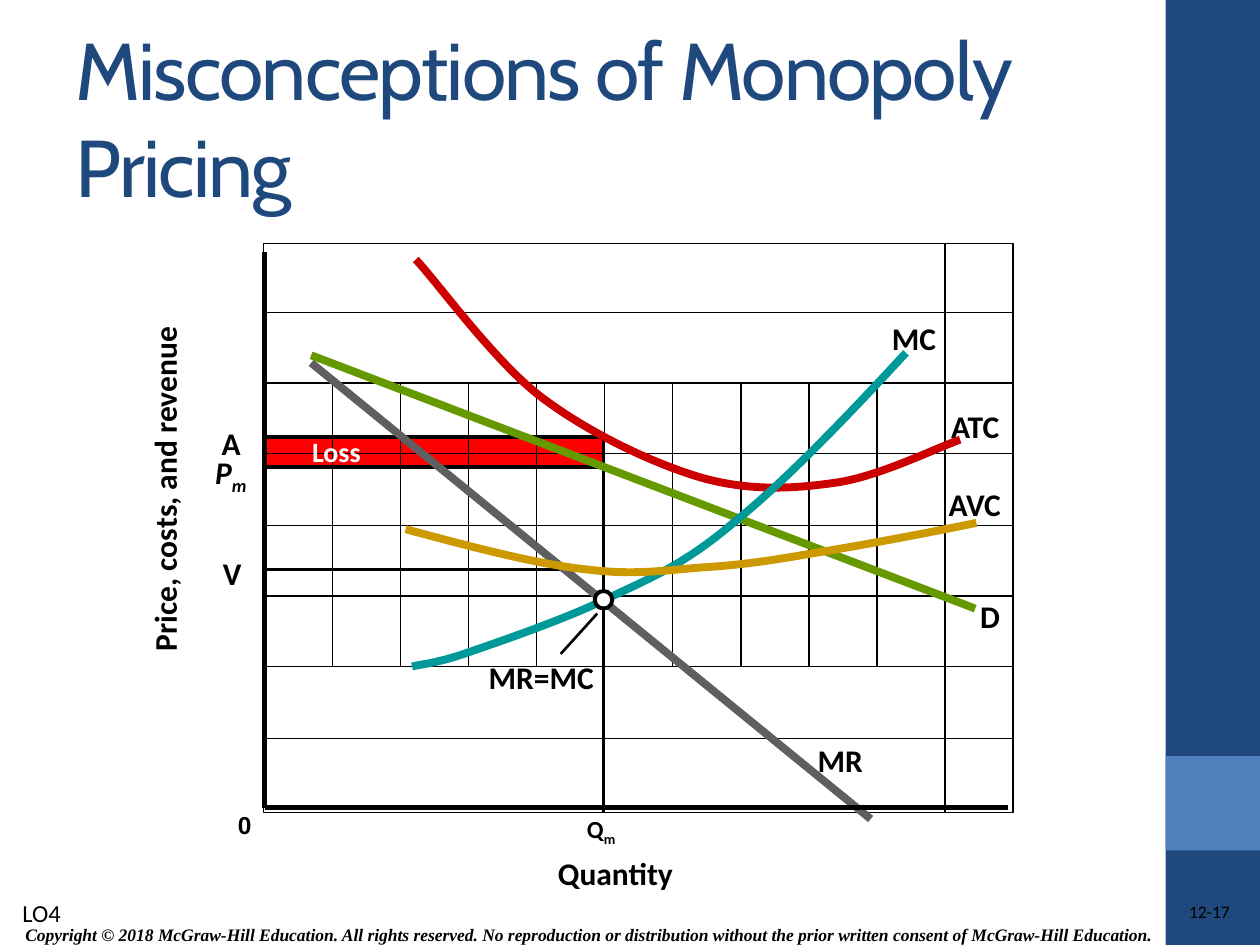
from lxml.etree import SubElement
from pptx import Presentation
from pptx.dml.color import RGBColor
from pptx.enum.shapes import MSO_CONNECTOR as Connector, MSO_SHAPE as Shape
from pptx.enum.text import MSO_ANCHOR as Anchor, MSO_AUTO_SIZE as AutoSize, PP_ALIGN as Align
from pptx.oxml.ns import qn
from pptx.util import Inches, Pt

COLORS = {
    "navy": "1F497D", "blue": "4F81BD", "black": "000000", "white": "FFFFFF",
    "loss": "FF0000", "ATC": "CC0000", "MR": "5F5F5F", "D": "669900",
    "MC": "009999", "AVC": "CC9900",
}
TITLE = "Misconceptions of Monopoly Pricing"
COPYRIGHT = ("Copyright © 2018 McGraw-Hill Education. All rights reserved. No reproduction "
             "or distribution without the prior written consent of McGraw-Hill Education.")

# Chart frame and grid, in inches
LEFT, TOP, WIDTH, HEIGHT = 2.09, 1.93, 5.95, 4.52
RIGHT, BOTTOM = LEFT + WIDTH, TOP + HEIGHT
COLUMN_XS = [2.64 + 0.54 * i for i in range(9)]
ROW_YS = [2.48 + 0.5625 * i for i in range(7)]
LAST_COLUMN_X = 7.5

# Levels read off the axes
AXIS_X, AXIS_Y = 2.1, 6.41
QUANTITY_X = 4.79
COST_Y, PRICE_Y, VARIABLE_COST_Y = 3.47, 3.71, 4.52

# Each curve: a start point, then three Bezier points per segment
CURVES = {
    "ATC": [(3.3, 2.06), (3.47, 2.24), (3.91, 2.85), (4.28, 3.14), (4.66, 3.43),
            (5.16, 3.67), (5.56, 3.79), (5.95, 3.9), (6.3, 3.88), (6.64, 3.83),
            (6.98, 3.78), (7.42, 3.56), (7.62, 3.49)],
    "MC": [(3.27, 5.29), (3.34, 5.27), (3.45, 5.27), (3.71, 5.18), (3.97, 5.09),
           (4.47, 4.92), (4.82, 4.75), (5.18, 4.58), (5.43, 4.48), (5.82, 4.15),
           (6.22, 3.83), (6.71, 3.32), (7.19, 2.8)],
    "AVC": [(3.22, 4.2), (3.74, 4.34), (4.27, 4.48), (4.66, 4.52), (5.06, 4.57),
            (5.31, 4.52), (5.62, 4.5), (5.93, 4.48), (6.17, 4.44), (6.52, 4.38),
            (6.88, 4.32), (7.31, 4.24), (7.75, 4.15)],
}
STRAIGHT_CURVES = {"MR": (2.47, 2.88, 6.91, 6.5), "D": (2.47, 2.82, 7.74, 4.83)}

# text, box, format
LABELS = [
    ("0", (1.79, 6.38, 0.31, 0.33), {"size": 14, "font_name": "Arial"}),
    ("Price, costs, and revenue", (-0.09, 3.67, 2.79, 0.4), {"rotation": 270}),
    ("Quantity", (4.33, 6.73, 1.12, 0.4), {}),
    ("D", (7.68, 4.69, 0.36, 0.4), {}),
    ("MR", (6.39, 5.83, 0.56, 0.4), {}),
    ("ATC", (7.45, 3.18, 0.59, 0.4), {}),
    ("MC", (6.98, 2.48, 0.56, 0.4), {}),
    ("MR=MC", (3.78, 5.17, 1.04, 0.4), {}),
    ("AVC", (7.43, 3.8, 0.62, 0.4), {}),
    ("P", (1.61, 3.55, 0.47, 0.4), {"italic": True, "subscript": "m"}),
    ("Q", (4.56, 6.41, 0.44, 0.34), {"size": 14, "subscript": "m"}),
    ("V", (1.67, 4.35, 0.35, 0.4), {}),
    ("A", (1.66, 3.32, 0.35, 0.4), {}),
    ("Loss", (2.37, 3.44, 0.6, 0.33),
     {"size": 16, "color": "white", "align": Align.CENTER, "line_spacing": 0.85}),
    ("LO4", (0.08, 7.08, 0.53, 0.34), {"size": 14, "bold": False, "wrap": True}),
]


def rgb(name):
    return RGBColor.from_string(COLORS[name])


def inches(values):
    return [Inches(round(value, 2)) for value in values]


def add_text(slide, text, box, size=18, color="black", font_name="Calibri", bold=True,
             italic=False, align=Align.LEFT, anchor=Anchor.TOP, line_spacing=None,
             wrap=False, grow=True, inset=True, rotation=0, subscript=""):
    shape = slide.shapes.add_textbox(*inches(box))
    shape.rotation = rotation
    frame = shape.text_frame
    frame.word_wrap = wrap
    frame.auto_size = AutoSize.SHAPE_TO_FIT_TEXT if grow else AutoSize.NONE
    frame.vertical_anchor = anchor
    if not inset:
        frame.margin_left = frame.margin_right = frame.margin_top = frame.margin_bottom = 0
    paragraph = frame.paragraphs[0]
    paragraph.alignment = align
    if line_spacing:
        paragraph.line_spacing = line_spacing
    for content in filter(None, (text, subscript)):
        run = paragraph.add_run()
        run.text = content
        font = run.font
        font.size, font.name, font.bold, font.italic = Pt(size), font_name, bold, italic
        font.color.rgb = rgb(color)
    if subscript:
        font._element.set("baseline", "-25000")


def style_shape(shape, fill=None, line=None, weight=0.75):
    shape.shadow.inherit = False
    if fill:
        shape.fill.solid()
        shape.fill.fore_color.rgb = rgb(fill)
    else:
        shape.fill.background()
    if line:
        shape.line.color.rgb = rgb(line)
        shape.line.width = Pt(weight)
    else:
        shape.line.fill.background()


def add_shape(slide, kind, box, **style):
    style_shape(slide.shapes.add_shape(kind, *inches(box)), **style)


def add_line(slide, ends, color="black", weight=0.75):
    line = slide.shapes.add_connector(Connector.STRAIGHT, *inches(ends))
    line.line.color.rgb = rgb(color)
    line.line.width = Pt(weight)
    SubElement(line._element.spPr, qn("a:effectLst"))


def add_curve(slide, name):
    """Draw an open outline, then join every three line steps into one Bezier step."""
    start, *points = [inches(point) for point in CURVES[name]]
    builder = slide.shapes.build_freeform(*start)
    builder.add_line_segments(points, close=False)
    curve = builder.convert_to_shape()
    steps = list(curve._element.iter(qn("a:lnTo")))
    outline = steps[0].getparent()
    for first in range(0, len(steps), 3):
        bezier = SubElement(outline, qn("a:cubicBezTo"))
        for step in steps[first:first + 3]:
            bezier.append(step[0])
            outline.remove(step)
    style_shape(curve, line=name, weight=4.5)


def add_title(slide):
    title = slide.shapes.title
    title.left, title.top, title.width, title.height = inches((0.5, 0.3, 8.33, 1.25))
    frame = title.text_frame
    frame.word_wrap = True
    frame.auto_size = AutoSize.NONE
    frame.vertical_anchor = Anchor.MIDDLE
    paragraph = frame.paragraphs[0]
    paragraph.alignment = Align.LEFT
    run = paragraph.add_run()
    run.text = TITLE
    run.font.size, run.font.name = Pt(46), "Cabin"
    run.font.color.rgb = rgb("navy")
    run.font._element.set("spc", "-100")


def add_page_frame(slide):
    add_shape(slide, Shape.RECTANGLE, (9.25, 0, 0.75, 7.5), fill="navy")
    add_shape(slide, Shape.RECTANGLE, (9.25, 6, 0.75, 0.75), fill="blue")
    add_text(slide, COPYRIGHT, (0.06, 7.28, 9.22, 0.28), size=10, font_name="Times New Roman",
             italic=True, align=Align.CENTER, anchor=Anchor.MIDDLE, wrap=True, grow=False)
    add_text(slide, "12-17", (7.81, 7.15, 1.95, 0.2), size=10, bold=False, align=Align.RIGHT,
             line_spacing=1.02, wrap=True, grow=False, inset=False)


def add_grid(slide):
    add_shape(slide, Shape.RECTANGLE, (LEFT, TOP, WIDTH, HEIGHT), line="black")
    for x in COLUMN_XS:
        add_line(slide, (x, ROW_YS[1], x, ROW_YS[5]))
    for y in ROW_YS:
        add_line(slide, (LEFT, y, RIGHT, y))
    add_line(slide, (LAST_COLUMN_X, TOP, LAST_COLUMN_X, BOTTOM))


def add_chart_lines(slide):
    add_line(slide, (QUANTITY_X, COST_Y, QUANTITY_X, BOTTOM), weight=2.25)
    for y in (COST_Y, PRICE_Y, VARIABLE_COST_Y):
        add_line(slide, (AXIS_X, y, QUANTITY_X, y), weight=2.25)
    add_line(slide, (4.45, 5.19, 4.74, 4.87), weight=1.5)
    add_curve(slide, "ATC")
    for name, ends in STRAIGHT_CURVES.items():
        add_line(slide, ends, color=name, weight=4.5)
    add_curve(slide, "MC")
    add_shape(slide, Shape.OVAL, (4.72, 4.69, 0.14, 0.14), fill="white", line="black", weight=2.25)
    add_curve(slide, "AVC")
    add_line(slide, (AXIS_X, AXIS_Y, 8, AXIS_Y), weight=3)
    add_line(slide, (AXIS_X, 2, AXIS_X, AXIS_Y), weight=3)


def main():
    presentation = Presentation()
    presentation.slide_width, presentation.slide_height = Inches(10), Inches(7.5)
    slide = presentation.slides.add_slide(presentation.slide_layouts[5])
    add_page_frame(slide)
    add_title(slide)
    add_shape(slide, Shape.RECTANGLE,
              (AXIS_X, COST_Y, QUANTITY_X - AXIS_X, PRICE_Y - COST_Y), fill="loss")
    add_grid(slide)
    for text, box, text_format in LABELS:
        add_text(slide, text, box, **text_format)
    add_chart_lines(slide)
    presentation.save("out.pptx")


if __name__ == "__main__":
    main()
